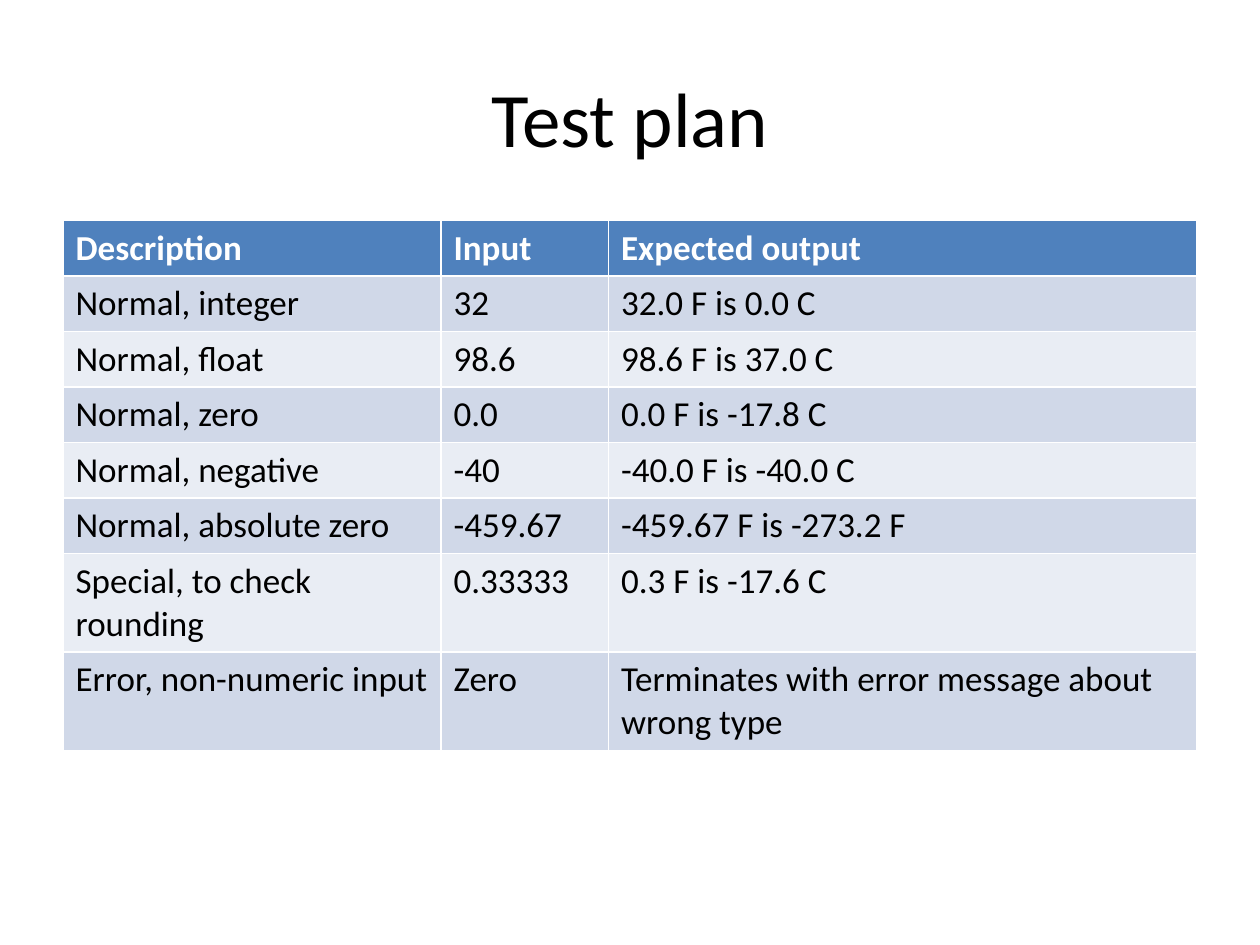
from pptx import Presentation
from pptx.dml.color import RGBColor
from pptx.enum import text
from pptx.util import Inches, Pt

FONT = "Calibri"
COLORS = {
    "text": "000000",
    "header_text": "FFFFFF",
    "header": "4F81BD",
    "odd": "D0D8E8",
    "even": "E9EDF4",
}
COLUMN_WIDTHS = (3, 1.33, 4.67)
ROW_HEIGHT = 0.41
TEST_CASES = [
    ("Description", "Input", "Expected output"),
    ("Normal, integer", "32", "32.0 F is 0.0 C"),
    ("Normal, float", "98.6", "98.6 F is 37.0 C"),
    ("Normal, zero", "0.0", "0.0 F is -17.8 C"),
    ("Normal, negative", "-40", "-40.0 F is -40.0 C"),
    ("Normal, absolute zero", "-459.67", "-459.67 F is -273.2 F"),
    ("Special, to check rounding", "0.33333", "0.3 F is -17.6 C"),
    ("Error, non-numeric input", "Zero",
     "Terminates with error message about wrong type"),
]


def color(name):
    return RGBColor.from_string(COLORS[name])


def format_text(tf, size, color_name, bold=False):
    for p in tf.paragraphs:
        for r in p.runs:
            r.font.name = FONT
            r.font.size = Pt(size)
            r.font.bold = bold
            r.font.color.rgb = color(color_name)


def add_title(slide, title, left, top, width, height):
    sp = slide.shapes.title
    sp.left, sp.top = Inches(left), Inches(top)
    sp.width, sp.height = Inches(width), Inches(height)
    tf = sp.text_frame
    tf.text = title
    tf.vertical_anchor = text.MSO_ANCHOR.MIDDLE
    tf.paragraphs[0].alignment = text.PP_ALIGN.CENTER
    format_text(tf, 44, "text")


def add_test_table(slide, rows, left, top, width):
    table = slide.shapes.add_table(
        len(rows), len(COLUMN_WIDTHS), Inches(left), Inches(top),
        Inches(width), Inches(ROW_HEIGHT * len(rows))).table
    scale = width / sum(COLUMN_WIDTHS)
    for column, share in zip(table.columns, COLUMN_WIDTHS):
        column.width = Inches(share * scale)
    for i, values in enumerate(rows):
        table.rows[i].height = Inches(ROW_HEIGHT)
        header = i == 0
        fill = "header" if header else "odd" if i % 2 else "even"
        for j, value in enumerate(values):
            cell = table.cell(i, j)
            cell.text_frame.text = value
            cell.fill.solid()
            cell.fill.fore_color.rgb = color(fill)
            format_text(cell.text_frame, 20,
                        "header_text" if header else "text", header)


def main():
    prs = Presentation()
    prs.slide_width, prs.slide_height = Inches(10), Inches(7.5)
    slide = prs.slides.add_slide(prs.slide_layouts[5])
    add_title(slide, "Test plan", 0.5, 0.3, 9, 1.25)
    add_test_table(slide, TEST_CASES, 0.5, 1.75, 9)
    prs.save("out.pptx")


if __name__ == "__main__":
    main()
